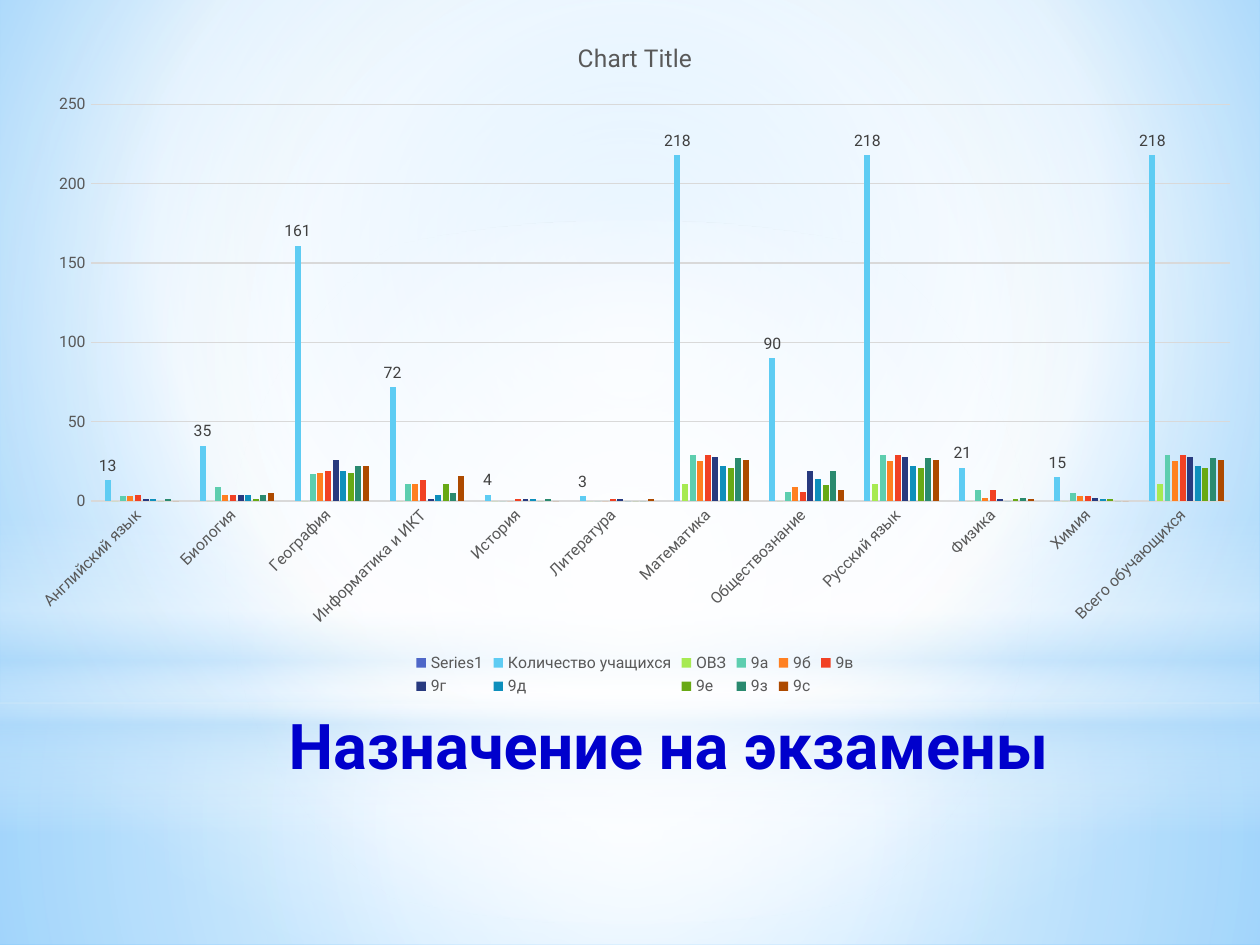
from typing import NamedTuple

from lxml.etree import SubElement
from pptx import Presentation
from pptx.chart.data import CategoryChartData
from pptx.dml.color import RGBColor
from pptx.enum.chart import XL_CHART_TYPE as Kind
from pptx.enum.chart import XL_LABEL_POSITION as Spot
from pptx.enum.chart import XL_LEGEND_POSITION as Side
from pptx.enum.chart import XL_TICK_MARK as Tick
from pptx.enum.shapes import MSO_SHAPE as Form
from pptx.enum.text import MSO_ANCHOR as Anchor
from pptx.enum.text import PP_ALIGN as Align
from pptx.oxml import parse_xml
from pptx.oxml.ns import nsdecls, qn
from pptx.util import Inches, Pt

FONT = "Roboto"
GREY = "595959"
RULE = "D9D9D9"
CENTRE = (50, 50, 50, 50)


class Stop(NamedTuple):
    pos: int
    color: str
    alpha: int = 100


class Grad(NamedTuple):
    """Round gradient around a focus (left, top, right, bottom), or linear without one."""
    stops: list[Stop]
    focus: tuple | None = None


class Layer(NamedTuple):
    form: Form
    top: float
    height: float
    grad: Grad


class Series(NamedTuple):
    name: str
    color: str
    vals: list


BACK = Grad([Stop(0, "9ED5FF"), Stop(60, "FFFFFF"), Stop(100, "5BB9FF")], (20, 10, 20, 60))

LAYERS = [
    Layer(Form.RECTANGLE, 5.58, 1.92, Grad(
        [Stop(0, "FFFFFF", 91), Stop(37, "FFFFFF", 76), Stop(100, "B4DCFA", 79)], CENTRE)),
    Layer(Form.RECTANGLE, 0, 5.58, Grad(
        [Stop(0, "FFFFFF", 89), Stop(48, "FFFFFF", 62), Stop(100, "B4DCFA", 79)], CENTRE)),
    Layer(Form.RECTANGLE, 4.12, 2.5, Grad(
        [Stop(0, "FFFFFF", 0), Stop(29, "FFFFFF", 30), Stop(45, "B4DCFA", 40),
         Stop(55, "FFFFFF", 26), Stop(65, "B4DCFA", 60), Stop(100, "FFFFFF", 0)])),
    Layer(Form.OVAL, 1.75, 5.58, Grad(
        [Stop(0, "FFFFFF"), Stop(56, "FFFFFF", 0)], CENTRE)),
]

EXAMS = ["Английский язык", "Биология", "География", "Информатика и ИКТ",
         "История", "Литература", "Математика", "Обществознание",
         "Русский язык", "Физика", "Химия", "Всего обучающихся"]

SERIES = [
    Series("Series1", "4E67C8", [None] * len(EXAMS)),
    Series("Количество учащихся", "5ECCF3", [13, 35, 161, 72, 4, 3, 218, 90, 218, 21, 15, 218]),
    Series("ОВЗ", "A7EA52", [0, 0, 0, 0, 0, 0, 11, 0, 11, 0, 0, 11]),
    Series("9а", "5DCEAF", [3, 9, 17, 11, 0, 0, 29, 6, 29, 7, 5, 29]),
    Series("9б", "FF8021", [3, 4, 18, 11, 0, 0, 25, 9, 25, 2, 3, 25]),
    Series("9в", "F14124", [4, 4, 19, 13, 1, 1, 29, 6, 29, 7, 3, 29]),
    Series("9г", "283A7F", [1, 4, 26, 1, 1, 1, 28, 19, 28, 1, 2, 28]),
    Series("9д", "0E8FBC", [1, 4, 19, 4, 1, 0, 22, 14, 22, 0, 1, 22]),
    Series("9е", "68A915", [0, 1, 18, 11, 0, 0, 21, 10, 21, 1, 1, 21]),
    Series("9з", "2A8A6F", [1, 4, 22, 5, 1, 0, 27, 19, 27, 2, 0, 27]),
    Series("9с", "AD4A00", [0, 5, 22, 16, 0, 1, 26, 7, 26, 1, 0, 26]),
]


def rgb(code: str) -> RGBColor:
    return RGBColor.from_string(code)


def style(font, size: float, color: str, bold: bool = False) -> None:
    font.name, font.size, font.bold = FONT, Pt(size), bold
    font.color.rgb = rgb(color)


def paint(owner, fill, grad: Grad) -> None:
    """Swap the solid fill of the owner for a gradient."""
    fill.solid()
    node = parse_xml(f'<a:gradFill {nsdecls("a")} rotWithShape="1"><a:gsLst/></a:gradFill>')
    for stop in grad.stops:
        mark = SubElement(node[0], qn("a:gs"), pos=str(stop.pos * 1000))
        color = SubElement(mark, qn("a:srgbClr"), val=stop.color)
        if stop.alpha < 100:
            SubElement(color, qn("a:alpha"), val=str(stop.alpha * 1000))
    if grad.focus:
        way = SubElement(node, qn("a:path"), path="circle")
        rect = SubElement(way, qn("a:fillToRect"))
        for side, part in zip("ltrb", grad.focus):
            rect.set(side, str(part * 1000))
    else:
        SubElement(node, qn("a:lin"), ang="5400000", scaled="0")
    old = owner.element.find(".//" + qn("a:solidFill"))
    old.getparent().replace(old, node)


def add_layer(slide, layer: Layer) -> None:
    shape = slide.shapes.add_shape(
        layer.form, 0, Inches(layer.top), Inches(10), Inches(layer.height))
    shape.shadow.inherit = False
    shape.line.fill.background()
    paint(shape, shape.fill, layer.grad)


def add_title(slide, text: str) -> None:
    box = slide.shapes.add_textbox(Inches(1.3), Inches(5.56), Inches(7.12), Inches(1.25))
    frame = box.text_frame
    frame.word_wrap = True
    frame.vertical_anchor = Anchor.TOP
    para = frame.paragraphs[0]
    para.text, para.alignment = text, Align.RIGHT
    style(para.font, 36, "0000CC", True)


def rule(line) -> None:
    line.color.rgb = rgb(RULE)
    line.width = Pt(0.75)


def add_bars(slide) -> None:
    data = CategoryChartData()
    data.categories = EXAMS
    for row in SERIES:
        data.add_series(row.name, row.vals)
    chart = slide.shapes.add_chart(
        Kind.COLUMN_CLUSTERED, Inches(0.12), Inches(0.13),
        Inches(9.84), Inches(5.43), data).chart
    style(chart.font, 10, "000000")

    chart.has_title = True
    head = chart.chart_title.text_frame.paragraphs[0]
    head.text = "Chart Title"
    style(head.font, 14, GREY)
    chart.chart_title.include_in_layout = False

    chart.has_legend = True
    chart.legend.position = Side.BOTTOM
    chart.legend.include_in_layout = False
    style(chart.legend.font, 9, GREY)

    cats, nums = chart.category_axis, chart.value_axis
    for axis in (cats, nums):
        axis.major_tick_mark = axis.minor_tick_mark = Tick.NONE
        style(axis.tick_labels.font, 9, GREY)
    rule(cats.format.line)
    nums.format.line.fill.background()
    rule(nums.major_gridlines.format.line)
    turn = "/".join(qn(tag) for tag in ("c:catAx", "c:txPr", "a:bodyPr"))
    chart.element.find(".//" + turn).set("rot", "-2700000")

    plot = chart.plots[0]
    plot.gap_width, plot.overlap = 219, -27
    plot.vary_by_categories = False
    for bars, row in zip(plot.series, SERIES):
        bars.format.fill.solid()
        bars.format.fill.fore_color.rgb = rgb(row.color)
        bars.invert_if_negative = False
    labels = plot.series[1].data_labels
    labels.show_value = True
    labels.position = Spot.OUTSIDE_END
    style(labels.font, 9, "404040")


def main() -> None:
    deck = Presentation()
    deck.slide_width, deck.slide_height = Inches(10), Inches(7.5)
    slide = deck.slides.add_slide(deck.slide_layouts[6])
    paint(slide, slide.background.fill, BACK)
    for layer in LAYERS:
        add_layer(slide, layer)
    add_title(slide, "Назначение на экзамены")
    add_bars(slide)
    deck.save("out.pptx")


if __name__ == "__main__":
    main()
